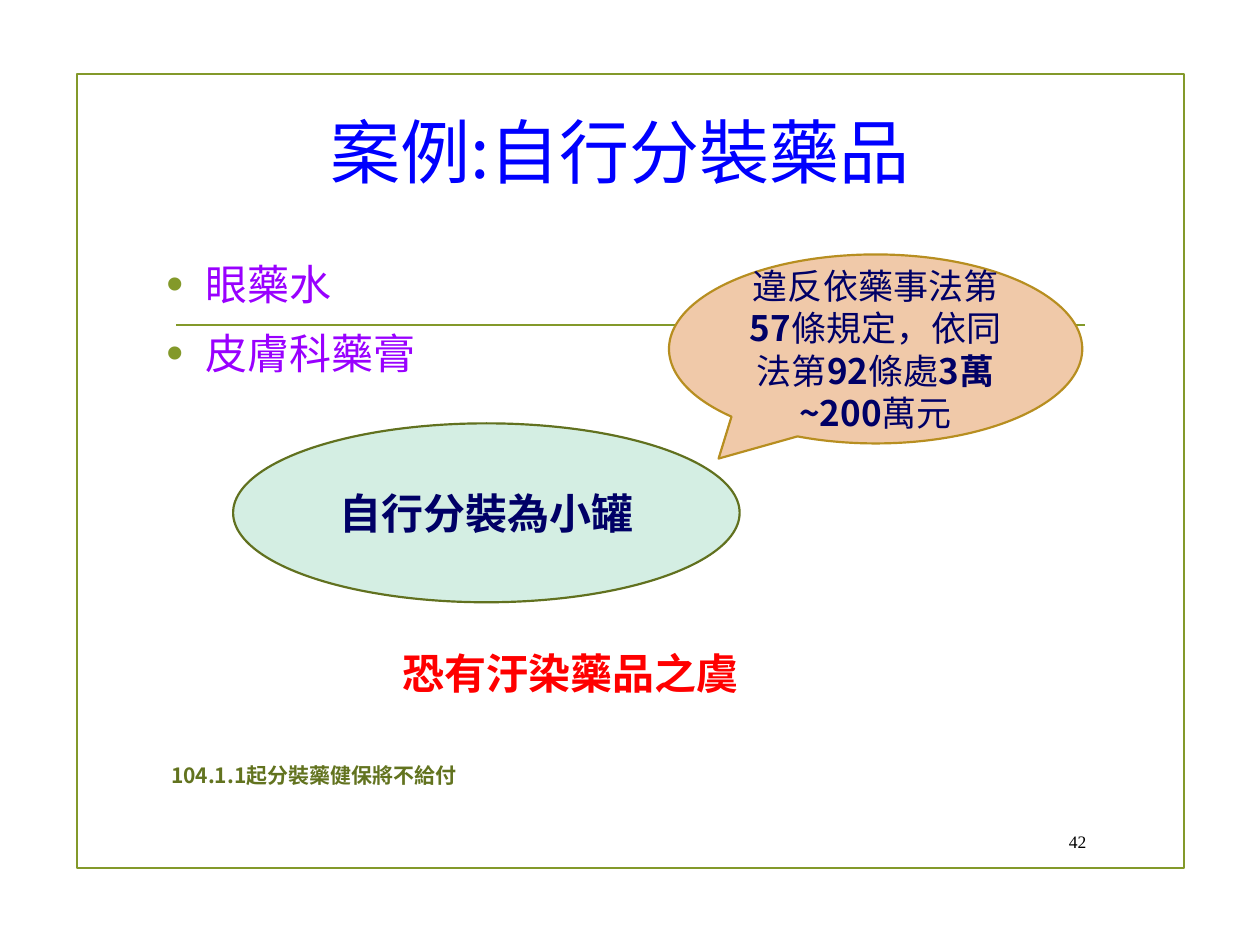
from lxml import etree
from pptx import Presentation
from pptx.dml.color import RGBColor
from pptx.enum.shapes import MSO_CONNECTOR, MSO_SHAPE
from pptx.enum.text import MSO_ANCHOR, MSO_AUTO_SIZE, PP_ALIGN
from pptx.oxml.ns import qn
from pptx.util import Inches, Pt

LEFT, CENTER, RIGHT = PP_ALIGN.LEFT, PP_ALIGN.CENTER, PP_ALIGN.RIGHT
TOP, MIDDLE = MSO_ANCHOR.TOP, MSO_ANCHOR.MIDDLE
NO_FIT = MSO_AUTO_SIZE.NONE
STRAIGHT = MSO_CONNECTOR.STRAIGHT
RECTANGLE, ELLIPSE = MSO_SHAPE.RECTANGLE, MSO_SHAPE.OVAL
CALLOUT = MSO_SHAPE.OVAL_CALLOUT

SANS, SERIF = "Noto Sans CJK SC", "Times New Roman"
OLIVE, NAVY = "83992A", "000066"

TITLE = "案例:自行分裝藥品"
MEDICINES = ["眼藥水", "皮膚科藥膏"]
PENALTY = [
    ("違反依藥事法第", False), ("57", True), ("條規定，依同法第", False),
    ("92", True), ("條處", False), ("3萬~200", True), ("萬元", False),
]
REPACKING = [("自行分裝為小罐", True)]
NOTES = [
    ([("恐有汙染藥品之虞", True)], (2.13, 5.09, 4.8, 0.51), 24, "FF0000", SANS, CENTER, TOP),
    ([("104.1.1起分裝藥健保將不給付", True)], (1.26, 6, 5.2, 0.3), 12, "62731F", SANS, LEFT, TOP),
    ([("42", False)], (8.29, 6.52, 0.43, 0.31), 10, "000000", SERIF, RIGHT, MIDDLE),
]
BALLOONS = [
    (CALLOUT, (5.31, 2.02, 3.28, 1.5), "F0C9A9", "B78E20", PENALTY, 20),
    (ELLIPSE, (1.85, 3.36, 4.02, 1.42), "D4EEE3", "61711F", REPACKING, 24),
]
CALLOUT_TIP = (-0.38, 0.58)


def color(value):
    """Turn a hex string into a colour."""
    return RGBColor.from_string(value)


def place(shape, box):
    """Move and size a shape in inches."""
    shape.left, shape.top, shape.width, shape.height = map(Inches, box)


def prepare(shape, anchor):
    """Set wrapping and anchoring and return the text frame."""
    frame = shape.text_frame
    frame.word_wrap = True
    frame.auto_size = NO_FIT
    frame.vertical_anchor = anchor
    return frame


def add_runs(paragraph, runs, size, hue, font=SANS, align=LEFT):
    """Write (text, bold) runs into a paragraph."""
    paragraph.alignment = align
    for text, bold in runs:
        run = paragraph.add_run()
        run.text = text
        run.font.size = Pt(size)
        run.font.bold = bold
        run.font.name = font
        run.font.color.rgb = color(hue)
        latin = run.font._element.find(qn("a:latin"))
        latin.addnext(latin.makeelement(qn("a:ea"), {"typeface": font}))


def add_bullet(paragraph):
    """Give a paragraph a hanging olive bullet."""
    properties = paragraph._p.get_or_add_pPr()
    properties.set("marL", str(Inches(0.31)))
    properties.set("indent", str(-Inches(0.31)))
    bullet_color = etree.SubElement(properties, qn("a:buClr"))
    etree.SubElement(bullet_color, qn("a:srgbClr"), val=OLIVE)
    etree.SubElement(properties, qn("a:buSzPct"), val="115000")
    etree.SubElement(properties, qn("a:buChar"), char="•")


def add_outlined(slide, kind, box, line):
    """Add a preset shape with a thin outline and no shadow."""
    shape = slide.shapes.add_shape(kind, *map(Inches, box))
    shape.shadow.inherit = False
    shape.line.color.rgb = color(line)
    shape.line.width = Pt(1.25)
    return shape


def add_frame(slide):
    """Draw the page border and the rule under the title."""
    add_outlined(slide, RECTANGLE, (0.61, 0.59, 8.79, 6.3), OLIVE).fill.background()
    ends = map(Inches, (1.4, 2.58, 8.61, 2.58))
    rule = slide.shapes.add_connector(STRAIGHT, *ends)
    rule.line.color.rgb = color(OLIVE)
    rule.line.width = Pt(1.25)
    etree.SubElement(rule._element.spPr, qn("a:effectLst"))


def add_title_and_list(slide):
    """Fill the title and body placeholders."""
    title, body = slide.placeholders
    place(title, (0.59, 0.77, 8.66, 0.85))
    add_runs(prepare(title, MIDDLE).paragraphs[0], [(TITLE, False)], 40, "0000FF", align=CENTER)
    place(body, (1.22, 2, 2.53, 1.24))
    frame = prepare(body, TOP)
    for index, medicine in enumerate(MEDICINES):
        paragraph = frame.add_paragraph() if index else frame.paragraphs[0]
        add_bullet(paragraph)
        paragraph.space_before = Pt(4.8 if index else 0)
        paragraph.space_after = Pt(6)
        add_runs(paragraph, [(medicine, False)], 24, "9900FF")


def add_balloons(slide):
    """Add the filled ellipse and its callout."""
    for kind, box, fill, line, runs, size in BALLOONS:
        balloon = add_outlined(slide, kind, box, line)
        balloon.fill.solid()
        balloon.fill.fore_color.rgb = color(fill)
        if kind == CALLOUT:
            balloon.adjustments[0], balloon.adjustments[1] = CALLOUT_TIP
        add_runs(prepare(balloon, MIDDLE).paragraphs[0], runs, size, NAVY, align=CENTER)


def add_notes(slide):
    """Add the warning, the payment note and the page number."""
    for runs, box, size, hue, font, align, anchor in NOTES:
        textbox = slide.shapes.add_textbox(*map(Inches, box))
        add_runs(prepare(textbox, anchor).paragraphs[0], runs, size, hue, font, align)


def main():
    """Build and save the slide."""
    presentation = Presentation()
    presentation.slide_width, presentation.slide_height = Inches(10), Inches(7.5)
    slide = presentation.slides.add_slide(presentation.slide_layouts[1])
    add_frame(slide)
    add_title_and_list(slide)
    add_balloons(slide)
    add_notes(slide)
    presentation.save("out.pptx")


if __name__ == "__main__":
    main()
